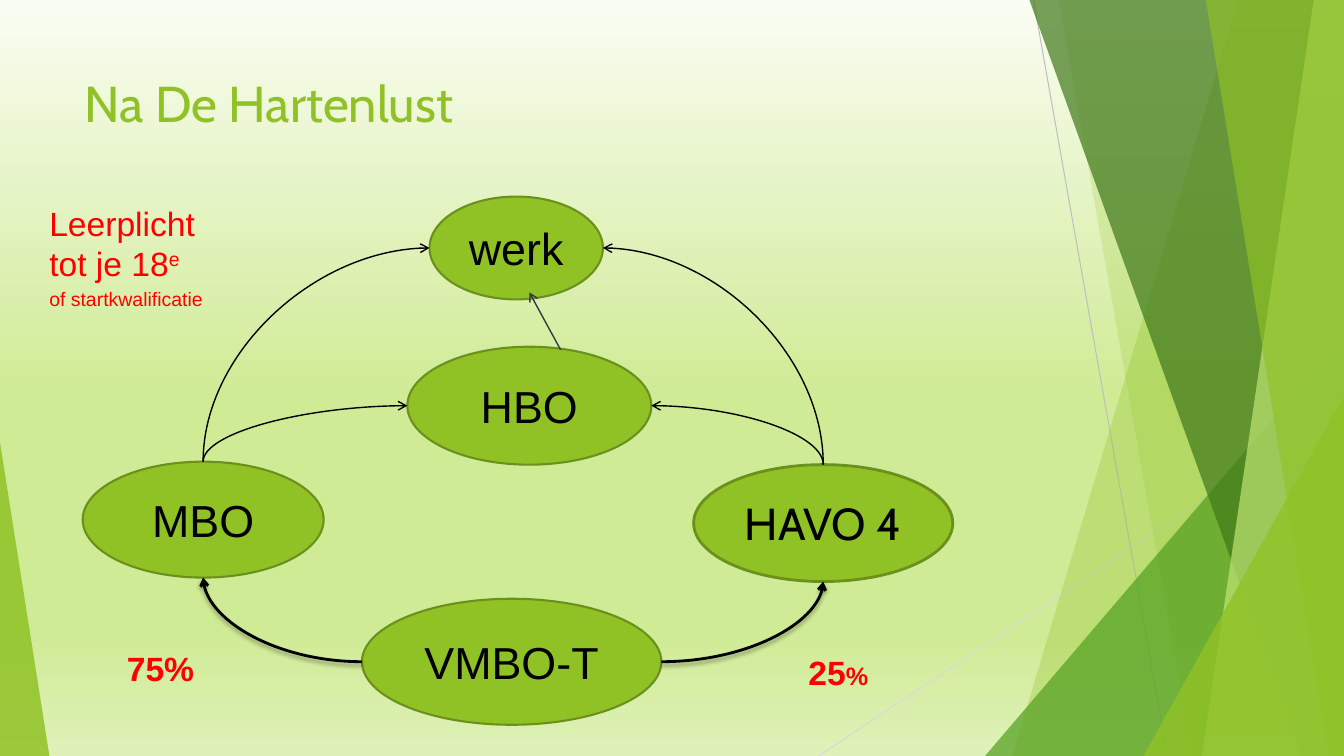
from lxml.etree import SubElement
from pptx import Presentation
from pptx.dml.color import RGBColor
from pptx.enum.shapes import MSO_CONNECTOR as Connector, MSO_SHAPE as Shape
from pptx.enum.text import MSO_ANCHOR as Anchor, MSO_AUTO_SIZE as AutoSize, PP_ALIGN as Align
from pptx.oxml.ns import qn
from pptx.util import Pt

PX = 9144
WIDTH, HEIGHT = 1333, 750

GREEN = RGBColor(0x90, 0xC2, 0x26)
OUTLINE = RGBColor(0x6B, 0x90, 0x1C)
MID_GREEN = RGBColor(0x54, 0xA0, 0x21)
DARK_GREEN = RGBColor(0x3F, 0x78, 0x19)
LIGHT_GREEN = RGBColor(0xC0, 0xE4, 0x74)
BLACK = RGBColor(0, 0, 0)
RED = RGBColor(0xFF, 0, 0)
SLATE = RGBColor(0x2C, 0x3C, 0x43)
GREY = RGBColor(0xBF, 0xBF, 0xBF)
PALE_GREY = RGBColor(0xD9, 0xD9, 0xD9)
BACKGROUND = [
    (0, RGBColor(0xFA, 0xFD, 0xF3)),
    (52, RGBColor(0xD0, 0xEB, 0x96)),
    (84, RGBColor(0xD0, 0xEB, 0x96)),
    (100, RGBColor(0xDF, 0xF1, 0xB9)),
]


def px(*lengths):
    return [length * PX for length in lengths]


def paint_background(slide):
    fill = slide.background.fill
    fill.gradient()
    fill.gradient_angle = 270
    stops = slide._element.find(".//" + qn("a:gsLst"))
    for stop in list(stops):
        stops.remove(stop)
    for position, color in BACKGROUND:
        stop = SubElement(stops, qn("a:gs"), pos=str(position * 1000))
        SubElement(stop, qn("a:srgbClr"), val=str(color))


def fill_facet(shape, color, opacity):
    shape.shadow.inherit = False
    shape.fill.solid()
    shape.fill.fore_color.rgb = color
    shape.line.fill.background()
    color_element = shape._element.spPr.find(qn("a:solidFill"))[0]
    SubElement(color_element, qn("a:alpha"), val=str(opacity * 1000))


def add_panel(slide, top_x, bottom_x, color, opacity):
    builder = slide.shapes.build_freeform(top_x, 0, scale=PX)
    builder.add_line_segments([(WIDTH, 0), (WIDTH, HEIGHT), (bottom_x, HEIGHT)])
    fill_facet(builder.convert_to_shape(), color, opacity)


def add_triangle(slide, left, top, width, peak, color, opacity):
    box = px(left, top, width, HEIGHT - top)
    shape = slide.shapes.add_shape(Shape.ISOSCELES_TRIANGLE, *box)
    shape.adjustments[0] = peak
    fill_facet(shape, color, opacity)


def add_line(slide, begin, end, color, weight, arrow=False, kind=Connector.STRAIGHT, shadow=False):
    ends = [round(value) for value in (*begin, *end)]
    line = slide.shapes.add_connector(kind, *ends)
    line.line.color.rgb = color
    line.line.width = Pt(weight)
    properties = line._element.spPr
    if arrow:
        SubElement(properties.find(qn("a:ln")), qn("a:tailEnd"), type="arrow")
    effects = SubElement(properties, qn("a:effectLst"))
    if shadow:
        outer = SubElement(effects, qn("a:outerShdw"), blurRad="40000", dist="23000",
                           dir="5400000", rotWithShape="0")
        color_element = SubElement(outer, qn("a:srgbClr"), val=str(BLACK))
        SubElement(color_element, qn("a:alpha"), val="35000")
    return line


def add_curve(slide, begin, end, weight, shadow=False):
    curve = add_line(slide, begin, end, BLACK, weight, True, Connector.CURVE, shadow)
    curve._element.spPr.find(qn("a:prstGeom")).set("prst", "curvedConnector2")
    return curve


def add_rising_curve(slide, begin, end):
    (x1, y1), (x2, y2) = begin, end
    middle_x, middle_y = (x1 + x2) / 2, (y1 + y2) / 2
    direction = 1 if x2 > x1 else -1
    half_width = direction * abs(y2 - y1) / 2
    half_height = abs(x2 - x1) / 2
    curve = add_curve(slide, (middle_x + half_width, middle_y + half_height),
                      (middle_x - half_width, middle_y - half_height), 1)
    rotation = 90 if direction > 0 else 270
    curve._element.spPr.find(qn("a:xfrm")).set("rot", str(rotation * 60000))


def side(shape, across, down):
    return shape.left + shape.width * across, shape.top + shape.height * down


def add_run(paragraph, text, size, color, font="Arial", bold=False, baseline=0):
    run = paragraph.add_run()
    run.text = text
    run.font.name = font
    run.font.size = Pt(size)
    run.font.bold = bold
    run.font.color.rgb = color
    if baseline:
        run._r.get_or_add_rPr().set("baseline", str(baseline * 1000))


def add_school(slide, name, box, font="Arial", weight=1.5):
    shape = slide.shapes.add_shape(Shape.OVAL, *px(*box))
    shape.shadow.inherit = False
    shape.fill.solid()
    shape.fill.fore_color.rgb = GREEN
    shape.line.color.rgb = OUTLINE
    shape.line.width = Pt(weight)
    shape.text_frame.vertical_anchor = Anchor.MIDDLE
    paragraph = shape.text_frame.paragraphs[0]
    paragraph.alignment = Align.CENTER
    add_run(paragraph, name, 32, BLACK, font)
    return shape


def add_note(slide, box):
    frame = slide.shapes.add_textbox(*px(*box)).text_frame
    frame.word_wrap = True
    frame.auto_size = AutoSize.SHAPE_TO_FIT_TEXT
    return frame.paragraphs[0]


def set_title(slide, text):
    title = slide.shapes.title
    title.left, title.top, title.width, title.height = px(74, 67, 940, 144)
    frame = title.text_frame
    frame.auto_size = AutoSize.NONE
    frame.vertical_anchor = Anchor.TOP
    frame.paragraphs[0].alignment = Align.LEFT
    add_run(frame.paragraphs[0], text, 36, GREEN, "Cabin")


def add_decoration(slide):
    add_line(slide, px(1025, 0), px(1158, HEIGHT), GREY, 0.75)
    add_line(slide, px(WIDTH, 403), px(812, HEIGHT), PALE_GREY, 0.75)
    add_panel(slide, 1228, 1004, GREEN, 30)
    add_panel(slide, 1050, 1183, GREEN, 20)
    add_triangle(slide, 977, 333, 356, 1, MID_GREEN, 72)
    add_panel(slide, 1021, 1291, DARK_GREEN, 70)
    add_panel(slide, 1303, 1192, LIGHT_GREEN, 70)
    add_panel(slide, 1196, 1318, GREEN, 65)
    add_triangle(slide, 1134, 393, 199, 1, GREEN, 80)
    add_triangle(slide, 0, 439, 49, 0, GREEN, 85)


def add_routes(slide):
    mbo = add_school(slide, "MBO", (82, 458, 239, 115))
    hbo = add_school(slide, "HBO", (404, 344, 242, 117))
    havo = add_school(slide, "HAVO 4", (688, 461, 257, 116), "Cabin", 2)
    vmbo = add_school(slide, "VMBO-T", (359, 594, 297, 125))
    work = add_school(slide, "werk", (426, 195, 172, 102))
    for origin, across in ((mbo, 0), (havo, 1)):
        add_curve(slide, side(vmbo, across, 0.5), side(origin, 0.5, 1), 2, True)
        for target in (hbo, work):
            add_rising_curve(slide, side(origin, 0.5, 0), side(target, across, 0.5))
    add_line(slide, px(556, 347), px(525, 290), SLATE, 1, True)


def add_notes(slide):
    duty = add_note(slide, (39, 196, 239, 131))
    add_run(duty, "Leerplicht", 24, RED)
    duty.add_line_break()
    add_run(duty, "tot je 18", 24, RED)
    add_run(duty, "e", 24, RED, baseline=30)
    duty.add_line_break()
    add_run(duty, "of startkwalificatie", 24, RED, baseline=30)
    add_run(add_note(slide, (116, 638, 108, 50)), "75%", 24, RED, bold=True)
    havo_share = add_note(slide, (792, 642, 102, 50))
    add_run(havo_share, "25", 24, RED, bold=True)
    add_run(havo_share, "%", 18, RED, bold=True)


def main():
    presentation = Presentation()
    presentation.slide_width, presentation.slide_height = px(WIDTH, HEIGHT)
    slide = presentation.slides.add_slide(presentation.slide_layouts[5])
    paint_background(slide)
    add_decoration(slide)
    set_title(slide, "Na De Hartenlust")
    add_routes(slide)
    add_notes(slide)
    presentation.save("out.pptx")


if __name__ == "__main__":
    main()
